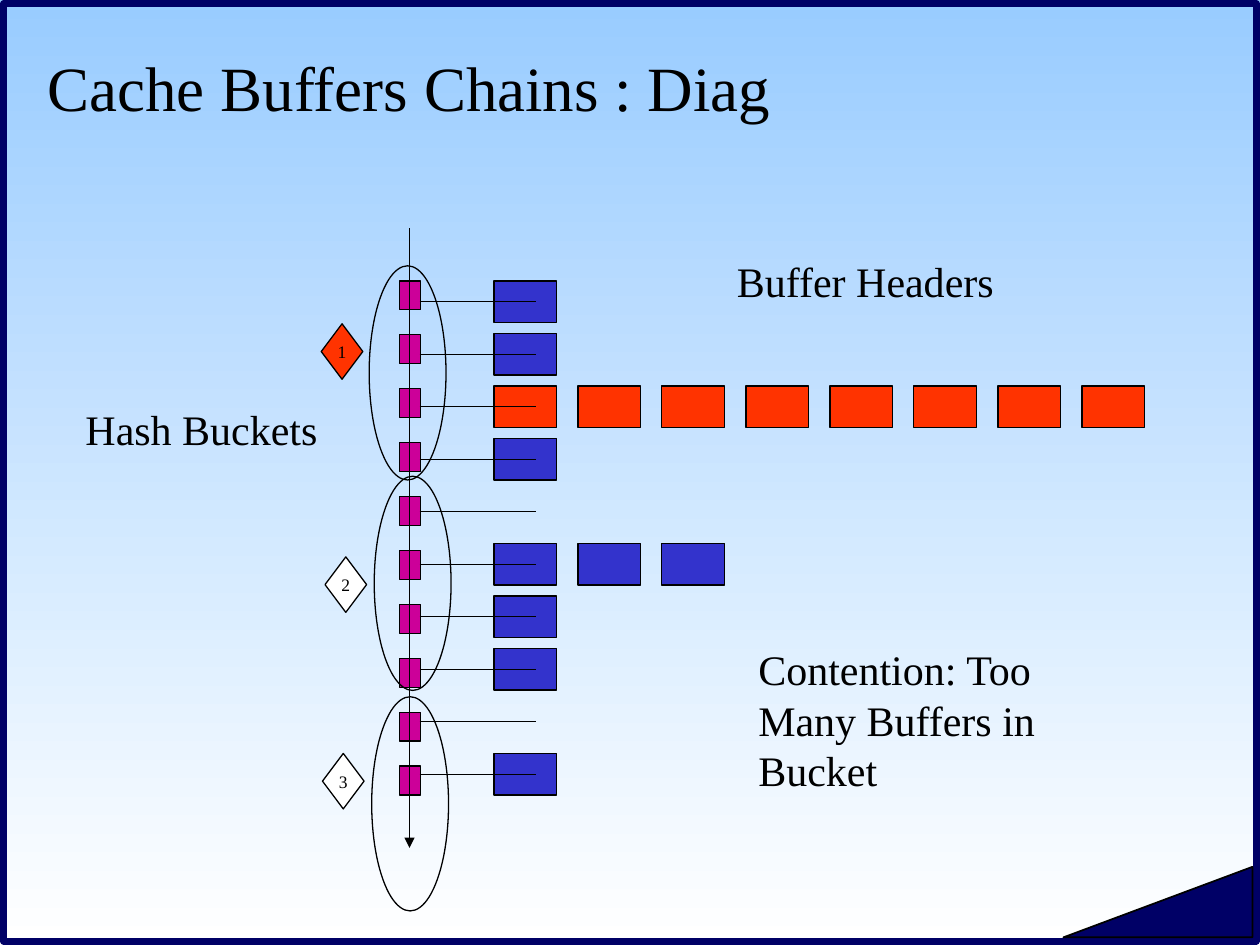
from dataclasses import dataclass

from lxml import etree
from pptx import Presentation
from pptx.dml.color import RGBColor
from pptx.enum.shapes import MSO_CONNECTOR, MSO_SHAPE
from pptx.enum.text import MSO_ANCHOR, PP_ALIGN
from pptx.oxml.ns import qn
from pptx.util import Inches, Pt

RECTANGLE = MSO_SHAPE.RECTANGLE
TRIANGLE = MSO_SHAPE.ISOSCELES_TRIANGLE
DIAMOND = MSO_SHAPE.DIAMOND
OVAL = MSO_SHAPE.OVAL
STRAIGHT = MSO_CONNECTOR.STRAIGHT
TOP, MIDDLE = MSO_ANCHOR.TOP, MSO_ANCHOR.MIDDLE
CENTER = PP_ALIGN.CENTER


@dataclass(frozen=True)
class Theme:
    font: str = "Times New Roman"
    title_size: float = 36
    label_size: float = 24
    marker_size: float = 10
    thin: float = 0.75
    ink: str = "000000"
    sky: str = "99CCFF"
    white: str = "FFFFFF"
    navy: str = "000066"
    bucket: str = "CC0099"
    buffer: str = "3333CC"
    hot: str = "FF3300"


class SlideBuilder:
    def __init__(self, slide, theme):
        self.slide = slide
        self.theme = theme

    def background(self):
        fill = self.slide.background.fill
        fill.gradient()
        fill.gradient_angle = 270
        colors = (self.theme.sky, self.theme.white)
        for position, (stop, color) in enumerate(zip(fill.gradient_stops, colors)):
            stop.position = position
            stop.color.rgb = RGBColor.from_string(color)

    def group(self):
        return self.slide.shapes.add_group_shape()

    def shape(self, kind, left, top, width, height, fill=None, line=None,
              weight=None, group=None):
        shapes = (group or self.slide).shapes
        shape = shapes.add_shape(kind, Inches(left), Inches(top),
                                 Inches(width), Inches(height))
        shape.shadow.inherit = False
        if fill:
            shape.fill.solid()
            shape.fill.fore_color.rgb = RGBColor.from_string(fill)
        else:
            shape.fill.background()
        shape.line.color.rgb = RGBColor.from_string(line or self.theme.ink)
        shape.line.width = Pt(weight or self.theme.thin)
        return shape

    def line(self, x1, y1, x2, y2, arrow=False):
        connector = self.slide.shapes.add_connector(
            STRAIGHT, Inches(x1), Inches(y1), Inches(x2), Inches(y2))
        connector.line.color.rgb = RGBColor.from_string(self.theme.ink)
        connector.line.width = Pt(self.theme.thin)
        properties = connector._element.spPr
        if arrow:
            etree.SubElement(properties.find(qn("a:ln")), qn("a:tailEnd"),
                             type="triangle")
        etree.SubElement(properties, qn("a:effectLst"))

    def set_text(self, frame, text, size):
        paragraph = frame.paragraphs[0]
        paragraph.text = text
        paragraph.font.name = self.theme.font
        paragraph.font.size = Pt(size)
        paragraph.font.color.rgb = RGBColor.from_string(self.theme.ink)
        return paragraph

    def text(self, text, left, top, width, height, size, anchor=TOP):
        box = self.slide.shapes.add_textbox(Inches(left), Inches(top),
                                            Inches(width), Inches(height))
        frame = box.text_frame
        frame.word_wrap = True
        frame.vertical_anchor = anchor
        self.set_text(frame, text, size)

    def marker(self, text, left, top, fill):
        """Numbered diamond beside a set of buckets."""
        frame = self.shape(DIAMOND, left, top, 0.33, 0.44, fill).text_frame
        frame.word_wrap = False
        frame.vertical_anchor = MIDDLE
        frame.margin_left = frame.margin_right = 0
        frame.margin_top = frame.margin_bottom = 0
        self.set_text(frame, text, self.theme.marker_size).alignment = CENTER


def draw_chains(builder):
    theme = builder.theme
    chain_lengths = [1, 1, 8, 1, 0, 3, 1, 1, 0, 1]
    longest = max(chain_lengths)
    first_top, last_bucket_top = 2.23, 6.08
    bucket_pitch = (last_bucket_top - first_top) / (len(chain_lengths) - 1)
    row_pitch, column_pitch = 5 / 12, 2 / 3
    header_left, header_width, header_height = 3.92, 0.5, 0.33

    buckets = builder.group()
    for row, length in enumerate(chain_lengths):
        builder.shape(RECTANGLE, 3.17, first_top + row * bucket_pitch, 0.17, 0.23,
                      theme.bucket, group=buckets)
        color = theme.hot if length == longest else theme.buffer
        for column in range(length):
            builder.shape(RECTANGLE, header_left + column * column_pitch,
                          first_top + row * row_pitch,
                          header_width, header_height, color)

    builder.line(3.25, 1.81, 3.25, 6.73, arrow=True)
    for row in range(len(chain_lengths)):
        y = first_top + header_height / 2 + row * row_pitch
        builder.line(3.33, y, 4.25, y)


def main():
    presentation = Presentation()
    presentation.slide_width = Inches(10)
    presentation.slide_height = Inches(7.5)
    theme = Theme()
    slide = presentation.slides.add_slide(presentation.slide_layouts[6])
    builder = SlideBuilder(slide, theme)

    builder.background()
    builder.shape(RECTANGLE, 0.03, 0.03, 9.94, 7.44, line=theme.navy, weight=4)
    corner = builder.shape(TRIANGLE, 8.44, 6.88, 1.5, 0.56, theme.navy, weight=1)
    corner.adjustments[0] = 1
    builder.text("Cache Buffers Chains : Diag", 0.28, 0.28, 8.98, 0.81,
                 theme.title_size, MIDDLE)

    draw_chains(builder)

    for label, left, top, width, height in [
        ("Hash Buckets", 0.58, 3.15, 2.33, 0.5),
        ("Buffer Headers", 5.75, 1.98, 2.58, 0.5),
        ("Contention: Too Many Buffers in Bucket", 5.92, 5.06, 2.83, 1.3),
    ]:
        builder.text(label, left, top, width, height, theme.label_size)

    for number, left, top, fill in [
        ("1", 2.55, 2.57, theme.hot),
        ("2", 2.58, 4.42, theme.white),
        ("3", 2.56, 5.98, theme.white),
    ]:
        builder.marker(number, left, top, fill)

    for left, top in [(2.93, 2.11), (2.97, 3.78), (2.95, 5.53)]:
        builder.shape(OVAL, left, top, 0.61, 1.7)

    presentation.save("out.pptx")


if __name__ == "__main__":
    main()
